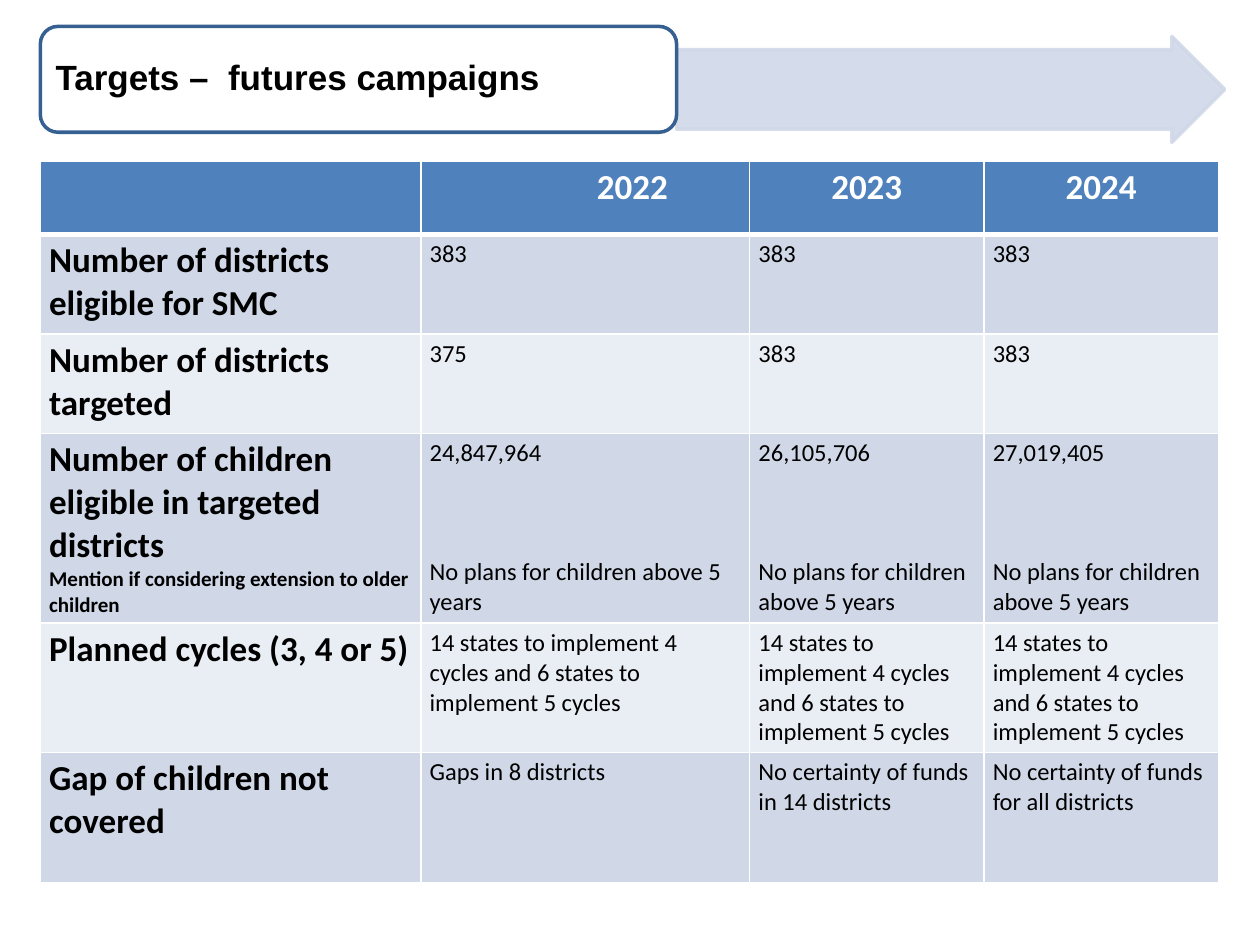
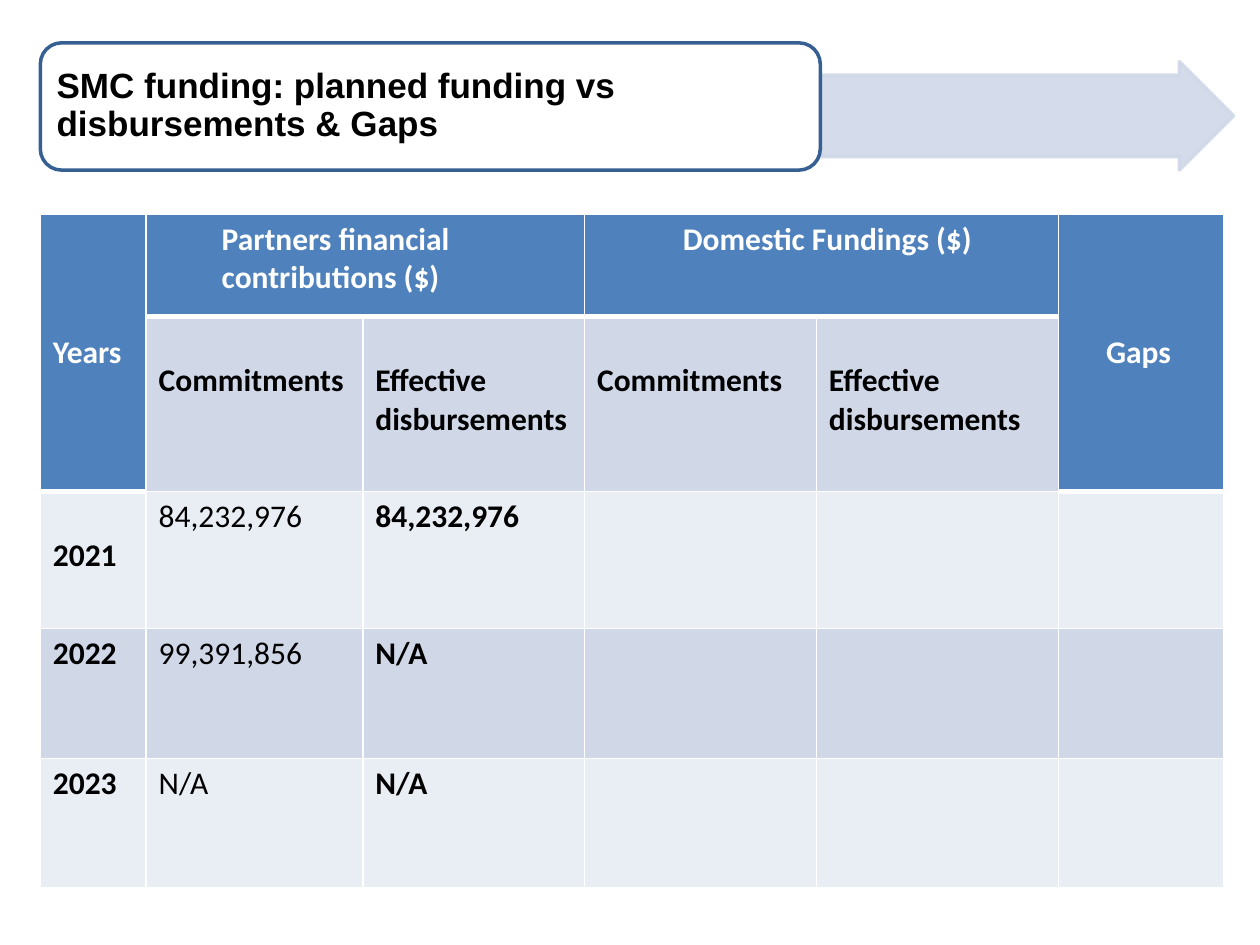
from lxml import etree
from pptx import Presentation
from pptx.dml.color import RGBColor
from pptx.enum.shapes import MSO_SHAPE
from pptx.enum.text import MSO_ANCHOR, PP_ALIGN
from pptx.oxml.ns import qn
from pptx.util import Inches, Pt

BLACK = RGBColor(0, 0, 0)
WHITE = RGBColor(255, 255, 255)
BLUE = RGBColor(0x4F, 0x81, 0xBD)
NAVY = RGBColor(0x37, 0x60, 0x92)
PALE = RGBColor(0xD0, 0xD8, 0xE8)
MIST = RGBColor(0xE9, 0xED, 0xF4)
ARROW = MSO_SHAPE.RIGHT_ARROW
ROUND = MSO_SHAPE.ROUNDED_RECTANGLE
MIDDLE = MSO_ANCHOR.MIDDLE
LEFT = PP_ALIGN.LEFT
CENTER = PP_ALIGN.CENTER

TARGETS = [
    ["", "2022", "2023", "2024"],
    ["Number of districts eligible for SMC", "383", "383", "383"],
    ["Number of districts targeted", "375", "383", "383"],
    ["Number of children eligible in targeted districts",
     "24,847,964", "26,105,706", "27,019,405"],
    ["Planned cycles (3, 4 or 5)"]
    + ["14 states to implement 4 cycles and 6 states to implement 5 cycles"] * 3,
    ["Gap of children not covered", "Gaps in 8 districts",
     "No certainty of funds in 14 districts",
     "No certainty of funds for all districts"],
]
FUNDS = [
    ["Years", "Partners financial contributions ($)", "",
     "Domestic Fundings ($)", "", "Gaps"],
    [""] + ["Commitments", "Effective disbursements"] * 2 + [""],
    ["2021", "84,232,976", "84,232,976", "", "", ""],
    ["2022", "99,391,856", "N/A", "", "", ""],
    ["2023", "N/A", "N/A", "", "", ""],
]


def write(frame, text, size=20, bold=True, color=BLACK, font="Calibri",
          align=LEFT, gap=0, lead=None):
    para = frame.add_paragraph() if frame.text else frame.paragraphs[0]
    para.alignment = align
    para.space_before = Pt(gap)
    para.line_spacing = lead
    run = para.add_run()
    run.text = text
    run.font.size = Pt(size)
    run.font.bold = bold
    run.font.name = font
    run.font.color.rgb = color


def block(slide, kind, box, fill, line):
    shape = slide.shapes.add_shape(kind, *map(Inches, box))
    shape.shadow.inherit = False
    shape.fill.solid()
    shape.fill.fore_color.rgb = fill
    shape.line.color.rgb = line
    shape.line.width = Pt(2)
    return shape


def banner(slide, text, box, top, width, height):
    arrow = block(slide, ARROW, (box[0] + box[2], top, width, height), PALE, PALE)
    arrow.adjustments[0] = 0.75
    arrow.adjustments[1] = 0.5
    for tint in arrow._element.spPr.iter(qn("a:srgbClr")):
        etree.SubElement(tint, qn("a:alpha"), val="90000")
    frame = block(slide, ROUND, box, WHITE, NAVY).text_frame
    frame.word_wrap = True
    frame.vertical_anchor = MIDDLE
    frame.margin_left = frame.margin_right = Inches(0.08)
    frame.margin_top = frame.margin_bottom = Inches(0.04)
    write(frame, text, font="Arial", lead=0.9)


def edge(cell, side, width):
    line = etree.SubElement(cell._tc.get_or_add_tcPr(), qn("a:ln" + side),
                            w=str(Pt(width)))
    fill = etree.SubElement(line, qn("a:solidFill"))
    etree.SubElement(fill, qn("a:srgbClr"), val=str(WHITE))


def grid(slide, box, cols, rows, spans=()):
    table = slide.shapes.add_table(len(rows), len(cols), *map(Inches, box)).table
    for col, width in zip(table.columns, cols):
        col.width = Inches(width)
    for row, height in zip(table.rows, rows):
        row.height = Inches(height)
    for first, last in spans:
        table.cell(*first).merge(table.cell(*last))
    for r, row in enumerate(table.rows):
        for cell in row.cells:
            head = r == 0 or cell.is_spanned
            for side in "LRTB" if head else "LRB":
                edge(cell, side, 3 if head and side == "B" else 1)
            cell.fill.solid()
            cell.fill.fore_color.rgb = BLUE if head else PALE if r % 2 else MIST
    return table


def targets(slide, box):
    table = grid(slide, box, [3.02, 2.61, 1.86, 1.86],
                 [0.58, 0.79, 0.79, 1.41, 0.85, 1.03])
    for r, row in enumerate(TARGETS):
        for c, text in enumerate(row):
            cell = table.cell(r, c)
            cell.margin_left = cell.margin_right = Inches(0.07)
            cell.margin_top = cell.margin_bottom = Inches(0.04)
            if not text:
                continue
            if r == 0:
                write(cell.text_frame, text, color=WHITE, align=CENTER)
            elif c == 0:
                write(cell.text_frame, text)
            else:
                write(cell.text_frame, text, size=14, bold=False)
    table.cell(0, 1).margin_left = Inches(0.82)
    write(table.cell(3, 0).text_frame,
          "Mention if considering extension to older children", size=12)
    for c in range(1, 4):
        write(table.cell(3, c).text_frame, "No plans for children above 5 years",
              size=14, bold=False, gap=51)


def funds(slide, box):
    spans = [((0, 0), (1, 0)), ((0, 1), (0, 2)),
             ((0, 3), (0, 4)), ((0, 5), (1, 5))]
    table = grid(slide, box, [0.84, 1.72, 1.76, 1.84, 1.92, 1.31],
                 [0.81, 1.39, 1.09, 1.03, 1.03], spans)
    for r, row in enumerate(FUNDS):
        for c, text in enumerate(row):
            if text:
                write(table.cell(r, c).text_frame, text, size=18,
                      bold=r < 2 or c != 1, color=BLACK if r else WHITE)
    for c, inset in ((1, 0.6), (3, 0.78), (5, 0.38)):
        table.cell(0, c).margin_left = Inches(inset)
    for c in (0, 5):
        table.cell(0, c).vertical_anchor = MIDDLE
    for r, c in [(1, 1), (1, 2), (1, 3), (1, 4), (2, 0)]:
        table.cell(r, c).margin_top = Inches(0.36)


def main():
    deck = Presentation()
    deck.slide_width = Inches(10)
    deck.slide_height = Inches(7.5)
    blank = deck.slide_layouts[6]

    slide = deck.slides.add_slide(blank)
    targets(slide, (0.32, 1.28, 9.35, 5.45))
    banner(slide, "Targets –  futures campaigns",
           (0.32, 0.21, 5.05, 0.84), 0.29, 4.35, 0.84)

    slide = deck.slides.add_slide(blank)
    funds(slide, (0.32, 1.7, 9.39, 5.35))
    banner(slide, "SMC funding: planned funding vs disbursements & Gaps",
           (0.32, 0.34, 6.19, 1.01), 0.49, 3.28, 0.86)

    deck.save("out.pptx")


if __name__ == "__main__":
    main()
